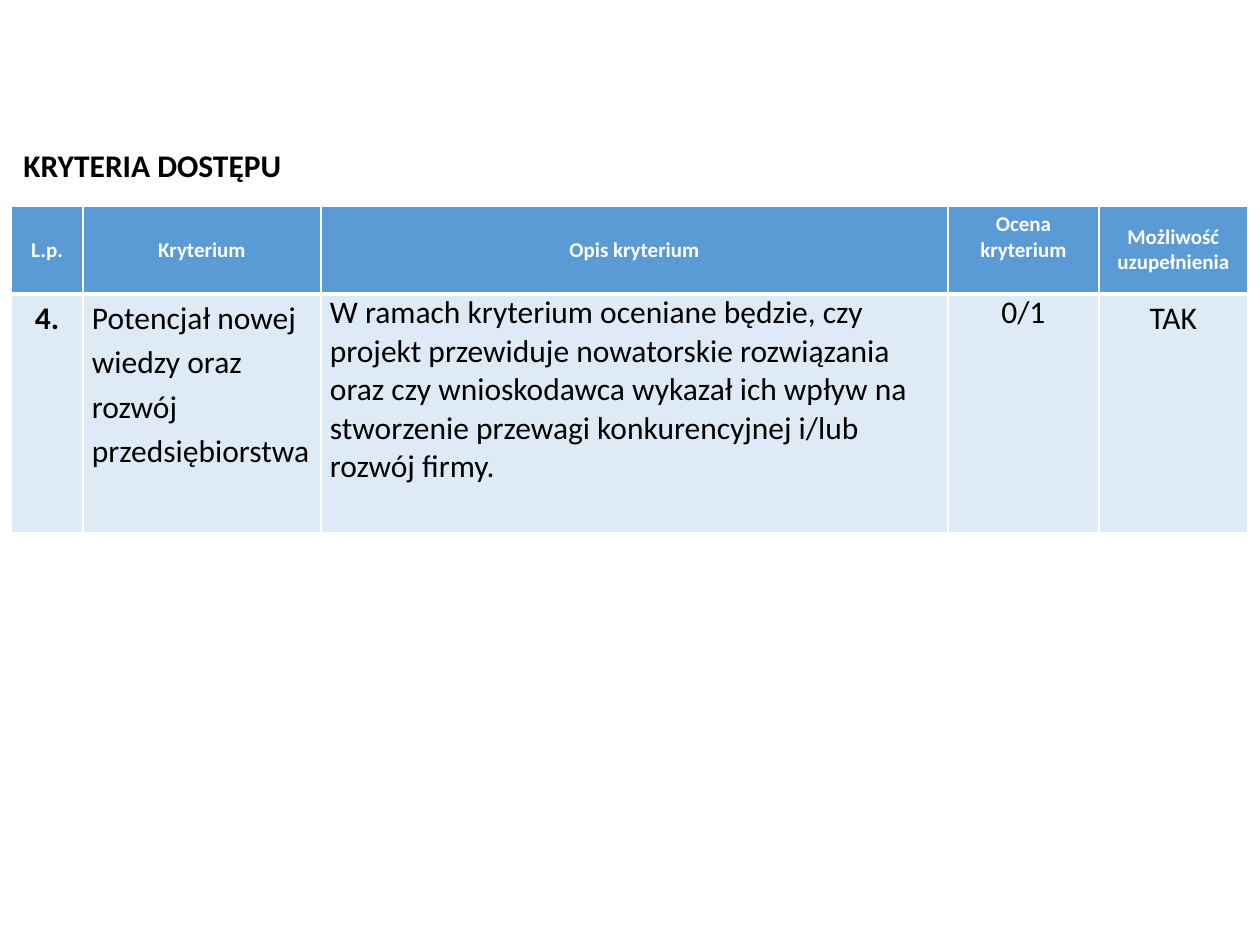
"""Build the access criteria slide with its assessment table."""
from dataclasses import dataclass

from lxml import etree
from pptx import Presentation, util as u
from pptx.dml.color import RGBColor
from pptx.enum import text
from pptx.oxml.ns import qn


@dataclass(frozen=True)
class Theme:
    font: str = "Calibri"
    ink: str = "000000"
    paper: str = "FFFFFF"
    header: str = "5B9BD5"
    body: str = "DEEBF7"
    header_size: int = 12
    body_size: int = 18
    thin: int = 1
    thick: int = 3


THEME = Theme()
SCALE = 914400 / 126
SLIDE = (1260, 945)
LEFT, CENTER = text.PP_ALIGN.LEFT, text.PP_ALIGN.CENTER

HEADING = "KRYTERIA DOSTĘPU"
HEADING_BOX = (11, 140, 286, 50)

TABLE_ORIGIN = (11, 206)
COLUMN_WIDTHS = (72, 238, 627, 151, 149)
ROW_HEIGHTS = (88, 239)
HEADER_MARGINS = (13, 6, 13, 6)
RAISED_MARGINS = (13, 0, 13, 25)
BODY_MARGINS = (9, 0, 9, 0)

HEADERS = [
    ("L.p.", HEADER_MARGINS),
    ("Kryterium", HEADER_MARGINS),
    ("Opis kryterium", HEADER_MARGINS),
    ("Ocena kryterium", RAISED_MARGINS),
    ("Możliwość uzupełnienia", HEADER_MARGINS),
]
CRITERION = [
    ("4.", CENTER, 1.15, True),
    ("Potencjał nowej wiedzy oraz rozwój przedsiębiorstwa", LEFT, 1.15, False),
    ("W ramach kryterium oceniane będzie, czy projekt przewiduje nowatorskie "
     "rozwiązania oraz czy wnioskodawca wykazał ich wpływ na stworzenie przewagi "
     "konkurencyjnej i/lub rozwój firmy.", LEFT, 1.0, False),
    ("0/1", CENTER, 1.0, False),
    ("TAK", CENTER, 1.15, False),
]


def px(length):
    return u.Emu(round(length * SCALE))


def write(frame, wording, size, color, bold, align=LEFT, spacing=1.0):
    paragraph = frame.paragraphs[0]
    paragraph.alignment = align
    paragraph.line_spacing = spacing
    run = paragraph.add_run()
    run.text = wording
    run.font.name = THEME.font
    run.font.size = u.Pt(size)
    run.font.bold = bold
    run.font.color.rgb = RGBColor.from_string(color)


def style_cell(cell, fill, margins, anchor, top, bottom):
    cell.margin_left, cell.margin_top, cell.margin_right, cell.margin_bottom = map(px, margins)
    cell.vertical_anchor = anchor
    properties = cell._tc.get_or_add_tcPr()
    for side, width in zip("LRTB", (THEME.thin, THEME.thin, top, bottom)):
        border = etree.SubElement(properties, qn(f"a:ln{side}"), w=str(u.Pt(width)))
        solid = etree.SubElement(border, qn("a:solidFill"))
        etree.SubElement(solid, qn("a:srgbClr"), val=THEME.paper)
    cell.fill.solid()
    cell.fill.fore_color.rgb = RGBColor.from_string(fill)


def add_criteria_table(slide):
    size = (sum(COLUMN_WIDTHS), sum(ROW_HEIGHTS))
    table = slide.shapes.add_table(
        len(ROW_HEIGHTS), len(COLUMN_WIDTHS), *map(px, TABLE_ORIGIN + size)).table
    for column, width in zip(table.columns, COLUMN_WIDTHS):
        column.width = px(width)
    for row, height in zip(table.rows, ROW_HEIGHTS):
        row.height = px(height)

    for cell, (label, margins) in zip(table.rows[0].cells, HEADERS):
        style_cell(cell, THEME.header, margins, text.MSO_ANCHOR.MIDDLE, THEME.thin, THEME.thick)
        write(cell.text_frame, label, THEME.header_size, THEME.paper, True, CENTER)
    for cell, (wording, align, spacing, bold) in zip(table.rows[1].cells, CRITERION):
        style_cell(cell, THEME.body, BODY_MARGINS, text.MSO_ANCHOR.TOP, THEME.thick, THEME.thin)
        write(cell.text_frame, wording, THEME.body_size, THEME.ink, bold, align, spacing)


def add_heading(slide):
    frame = slide.shapes.add_textbox(*map(px, HEADING_BOX)).text_frame
    frame.word_wrap = False
    frame.auto_size = text.MSO_AUTO_SIZE.SHAPE_TO_FIT_TEXT
    frame.vertical_anchor = text.MSO_ANCHOR.MIDDLE
    write(frame, HEADING, THEME.body_size, THEME.ink, True)


def main():
    deck = Presentation()
    deck.slide_width, deck.slide_height = map(px, SLIDE)
    slide = deck.slides.add_slide(deck.slide_layouts[6])
    add_criteria_table(slide)
    add_heading(slide)
    deck.save("out.pptx")


if __name__ == "__main__":
    main()
